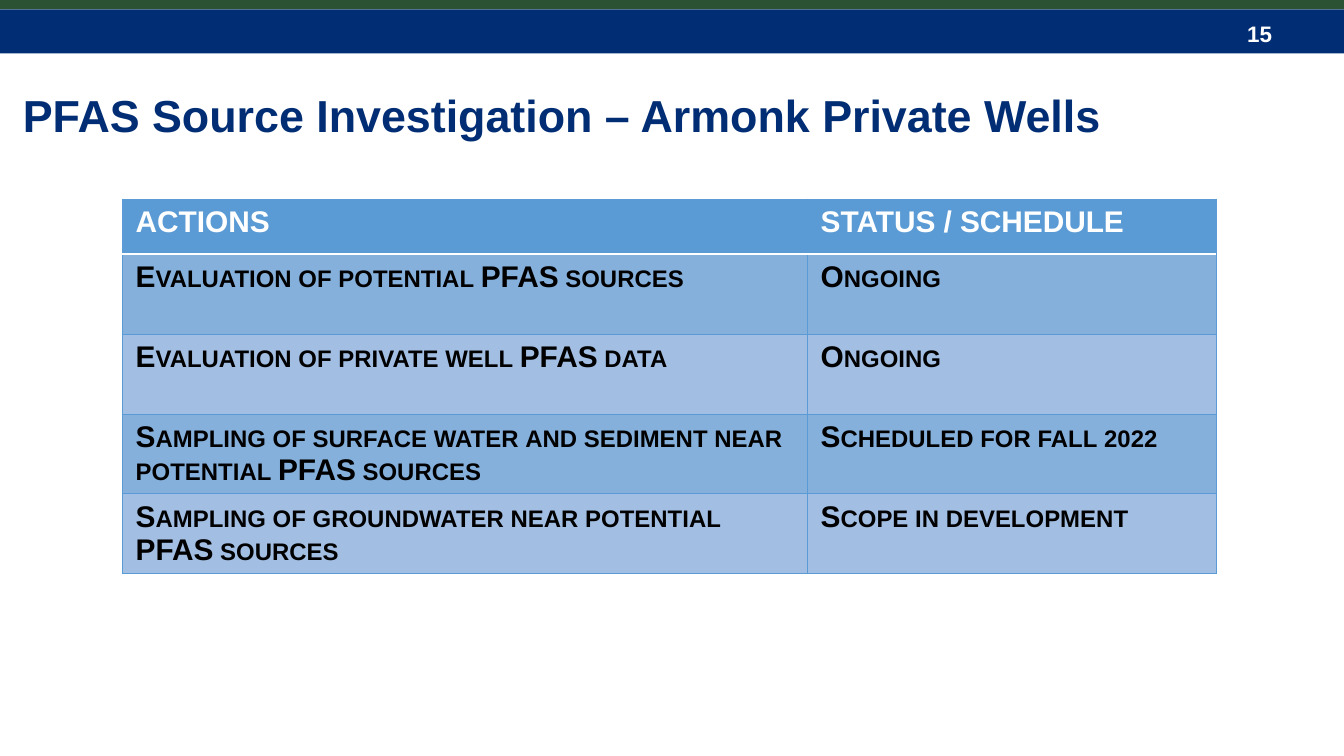
from lxml.etree import SubElement
from pptx import Presentation
from pptx.dml.color import RGBColor
from pptx.enum.shapes import MSO_SHAPE
from pptx.enum.text import MSO_ANCHOR, PP_ALIGN
from pptx.oxml.ns import qn
from pptx.util import Pt

NAVY = RGBColor(0x00, 0x2D, 0x73)
GREEN = RGBColor(0x2C, 0x52, 0x34)
BLUE = RGBColor(0x5B, 0x9B, 0xD5)
DARK_BAND = RGBColor(0x85, 0xB0, 0xDC)
LIGHT_BAND = RGBColor(0xA2, 0xBE, 0xE3)
WHITE = RGBColor(0xFF, 0xFF, 0xFF)
BLACK = RGBColor(0x00, 0x00, 0x00)

ROWS = [
    ("ACTIONS", "STATUS / SCHEDULE"),
    ("Evaluation of potential PFAS sources", "Ongoing"),
    ("Evaluation of private well PFAS data", "Ongoing"),
    ("Sampling of surface water and sediment near potential PFAS sources", "Scheduled for fall 2022"),
    ("Sampling of groundwater near potential PFAS sources", "Scope in development"),
]
COLUMN_WIDTHS = (367, 219)
HEADER_HEIGHT = 29.5
BODY_HEIGHT = 42.85


def set_values(target, values):
    for name, value in values.items():
        setattr(target, name, value)


def write_text(frame, text, size, color):
    para = frame.paragraphs[0]
    span = para.add_run()
    span.text = text
    set_values(span.font, {"name": "Arial", "size": Pt(size), "bold": True})
    span.font.color.rgb = color
    return para, span


def add_band(page, top, height, color):
    band = page.shapes.add_shape(MSO_SHAPE.RECTANGLE, 0, Pt(top), Pt(720), Pt(height))
    band.shadow.inherit = False
    band.fill.solid()
    band.fill.fore_color.rgb = color
    band.line.fill.background()
    return band


def add_page_number(band, number):
    frame = band.text_frame
    set_values(frame, {
        "margin_top": Pt(6.5), "margin_bottom": Pt(4.3), "margin_right": Pt(38.5),
        "vertical_anchor": MSO_ANCHOR.MIDDLE, "word_wrap": True,
    })
    para, span = write_text(frame, number, 12, WHITE)
    para.alignment = PP_ALIGN.RIGHT


def format_title(title, text):
    set_values(title, {"left": Pt(12.2), "top": Pt(34.5), "width": Pt(672), "height": Pt(57.6)})
    frame = title.text_frame
    set_values(frame, {
        "margin_left": 0, "margin_right": 0, "margin_top": 0, "margin_bottom": 0,
        "vertical_anchor": MSO_ANCHOR.MIDDLE, "word_wrap": True,
    })
    para, span = write_text(frame, text, 24, NAVY)
    set_values(para, {"alignment": PP_ALIGN.LEFT, "line_spacing": 0.9})


def add_border(cell, side, color, width):
    properties = cell._tc.get_or_add_tcPr()
    line = SubElement(properties, qn(f"a:ln{side}"), w=str(Pt(width)))
    fill = SubElement(line, qn("a:solidFill"))
    SubElement(fill, qn("a:srgbClr"), val=str(color))


def format_cell(cell, row_index, text):
    header = row_index == 0
    borders = {side: (BLUE, 0.5) for side in "LRTB"}
    if header:
        borders["B"] = (WHITE, 1)
    elif row_index == 1:
        borders["T"] = (WHITE, 1)
    for side, (color, width) in borders.items():
        add_border(cell, side, color, width)
    cell.fill.solid()
    cell.fill.fore_color.rgb = BLUE if header else (LIGHT_BAND, DARK_BAND)[row_index % 2]
    para, span = write_text(cell.text_frame, text, 16, WHITE if header else BLACK)
    if not header:
        span._r.get_or_add_rPr().set("cap", "small")


def add_actions_table(page):
    heights = [HEADER_HEIGHT] + [BODY_HEIGHT] * (len(ROWS) - 1)
    table = page.shapes.add_table(
        len(ROWS), len(COLUMN_WIDTHS), Pt(65.5), Pt(106.6),
        Pt(sum(COLUMN_WIDTHS)), Pt(sum(heights)),
    ).table
    for column, width in zip(table.columns, COLUMN_WIDTHS):
        column.width = Pt(width)
    for row_index, texts in enumerate(ROWS):
        table.rows[row_index].height = Pt(heights[row_index])
        for column_index, text in enumerate(texts):
            format_cell(table.cell(row_index, column_index), row_index, text)


def main():
    deck = Presentation()
    set_values(deck, {"slide_width": Pt(720), "slide_height": Pt(405)})
    page = deck.slides.add_slide(deck.slide_layouts[5])
    format_title(page.shapes.title, "PFAS Source Investigation – Armonk Private Wells")
    add_page_number(add_band(page, 5, 23.6, NAVY), "15")
    add_band(page, 0, 5, GREEN)
    add_actions_table(page)
    deck.save("out.pptx")


if __name__ == "__main__":
    main()
